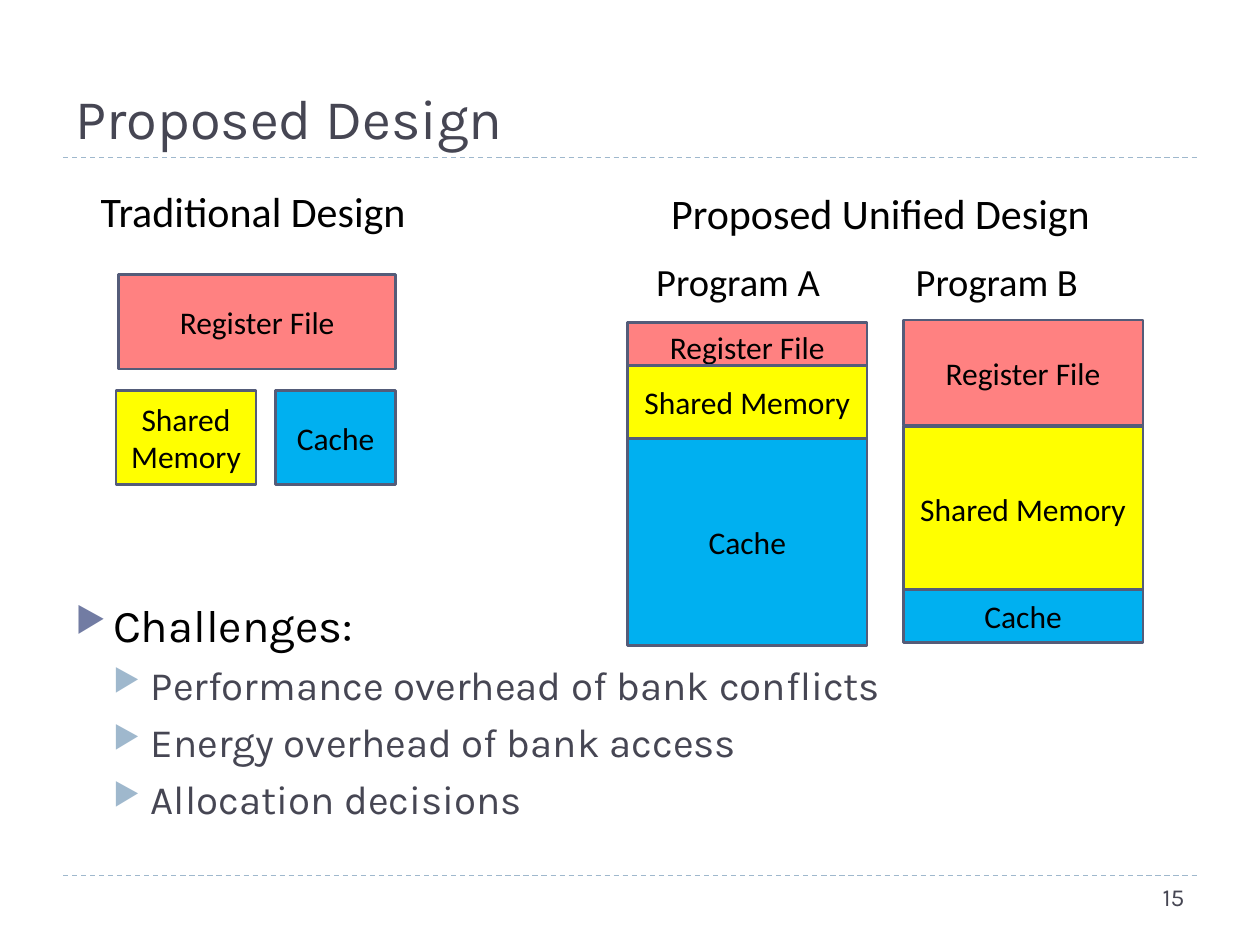
from lxml import etree
from pptx import Presentation
from pptx.dml.color import RGBColor
from pptx.enum.dml import MSO_LINE
from pptx.enum.shapes import MSO_CONNECTOR, MSO_SHAPE
from pptx.enum.text import MSO_ANCHOR, PP_ALIGN
from pptx.oxml.ns import qn
from pptx.util import Cm, Pt

LEFT, CENTER, RIGHT = PP_ALIGN.LEFT, PP_ALIGN.CENTER, PP_ALIGN.RIGHT
BOTTOM, MIDDLE = MSO_ANCHOR.BOTTOM, MSO_ANCHOR.MIDDLE
RECTANGLE, STRAIGHT, DASH = MSO_SHAPE.RECTANGLE, MSO_CONNECTOR.STRAIGHT, MSO_LINE.DASH

HEADING_FONT, DIAGRAM_FONT = "Karla", "Calibri"
INK, BLACK, RULE, BORDER = "464653", "000000", "9FB8CD", "545C79"
MARGIN, CONTENT_WIDTH = 1.27, 22.86
RULE_TOPS = (3.18, 17.65)

TITLE = "Proposed Design"
PAGE_NUMBER = "15"
CHALLENGES = [
    (0, "Challenges:"),
    (1, "Performance overhead of bank conflicts"),
    (1, "Energy overhead of bank access"),
    (1, "Allocation decisions"),
]
BULLET_LEVELS = [
    {"size": 26, "color": BLACK, "bullet": "727CA3", "before": 6},
    {"size": 23, "color": INK, "bullet": "9FB8CD", "before": 5},
]
INDENT = 0.76

CAPTIONS = [
    ("Traditional Design", 1.78, 3.61, 7, 24),
    ("Proposed Unified Design", 13.28, 3.66, 9.8, 24),
    ("Program A", 12.98, 5.08, 4.5, 22),
    ("Program B", 18.21, 5.08, 4.5, 22),
]

MEMORY_COLORS = {"Register File": "FF8181", "Shared Memory": "FFFF00", "Cache": "00B0F0"}
TRADITIONAL = [(2.39, 5.54, 5.59, 1.9), (2.34, 7.87, 2.82, 1.9), (5.56, 7.87, 2.41, 1.9)]
COLUMN_WIDTH = 4.83
PROGRAMS = [
    (12.65, [(6.5, 0.97), (7.37, 1.47), (8.84, 4.17)]),
    (18.21, [(6.45, 2.13), (8.6, 3.3), (11.89, 1.07)]),
]


def rgb(value):
    return RGBColor.from_string(value)


def style(para, font, size, color, align=LEFT):
    para.font.name = font
    para.font.size = Pt(size)
    para.font.color.rgb = rgb(color)
    para.alignment = align


def add_text(page, text, left, top, width, height, font, size, color, align=LEFT):
    box = page.shapes.add_textbox(Cm(left), Cm(top), Cm(width), Cm(height))
    box.text_frame.word_wrap = True
    para = box.text_frame.paragraphs[0]
    para.text = text
    style(para, font, size, color, align)


def add_rule(page, top):
    line = page.shapes.add_connector(
        STRAIGHT, Cm(MARGIN), Cm(top), Cm(MARGIN + CONTENT_WIDTH), Cm(top)
    )
    line.line.color.rgb = rgb(RULE)
    line.line.width = Pt(0.75)
    line.line.dash_style = DASH
    etree.SubElement(line._element.spPr, qn("a:effectLst"))


def add_memory(page, name, left, top, width, height):
    block = page.shapes.add_shape(RECTANGLE, Cm(left), Cm(top), Cm(width), Cm(height))
    block.shadow.inherit = False
    block.fill.solid()
    block.fill.fore_color.rgb = rgb(MEMORY_COLORS[name])
    block.line.color.rgb = rgb(BORDER)
    block.line.width = Pt(1.5)
    block.text_frame.word_wrap = True
    block.text_frame.vertical_anchor = MIDDLE
    para = block.text_frame.paragraphs[0]
    para.text = name
    style(para, DIAGRAM_FONT, 18, BLACK, CENTER)


def add_bullet(para, level, color):
    properties = para._p.get_or_add_pPr()
    properties.set("marL", str(Cm(INDENT * (level + 1))))
    properties.set("indent", str(-Cm(INDENT)))
    bullet_color = etree.Element(qn("a:buClr"))
    etree.SubElement(bullet_color, qn("a:srgbClr"), val=color)
    bullet = [
        bullet_color,
        etree.Element(qn("a:buSzPct"), val="76000"),
        etree.Element(qn("a:buChar"), char="▶"),
    ]
    default_font = properties.find(qn("a:defRPr"))
    for part in bullet:
        default_font.addprevious(part)


def add_challenges(page):
    box = page.shapes.add_textbox(Cm(MARGIN), Cm(11.91), Cm(CONTENT_WIDTH), Cm(5.18))
    frame = box.text_frame
    frame.word_wrap = True
    for index, (level, text) in enumerate(CHALLENGES):
        para = frame.add_paragraph() if index else frame.paragraphs[0]
        look = BULLET_LEVELS[level]
        para.text = text
        para.level = level
        para.space_before = Pt(look["before"])
        style(para, HEADING_FONT, look["size"], look["color"])
        add_bullet(para, level, look["bullet"])


def add_title(page):
    title = page.shapes.title
    title.left, title.top = Cm(MARGIN), Cm(0.43)
    title.width, title.height = Cm(CONTENT_WIDTH), Cm(2.74)
    title.text_frame.text = TITLE
    title.text_frame.vertical_anchor = BOTTOM
    style(title.text_frame.paragraphs[0], HEADING_FONT, 32, INK)


def main():
    deck = Presentation()
    deck.slide_width, deck.slide_height = Cm(25.4), Cm(19.05)
    page = deck.slides.add_slide(deck.slide_layouts[5])
    for top in RULE_TOPS:
        add_rule(page, top)
    add_title(page)
    add_challenges(page)
    add_text(page, PAGE_NUMBER, 18.62, 17.65, 5.51, 1.02, HEADING_FONT, 14, INK, RIGHT)
    for text, left, top, width, size in CAPTIONS:
        add_text(page, text, left, top, width, 1.27, DIAGRAM_FONT, size, BLACK)
    for name, place in zip(MEMORY_COLORS, TRADITIONAL):
        add_memory(page, name, *place)
    for left, bands in PROGRAMS:
        for name, (top, height) in zip(MEMORY_COLORS, bands):
            add_memory(page, name, left, top, COLUMN_WIDTH, height)
    deck.save("out.pptx")


if __name__ == "__main__":
    main()
